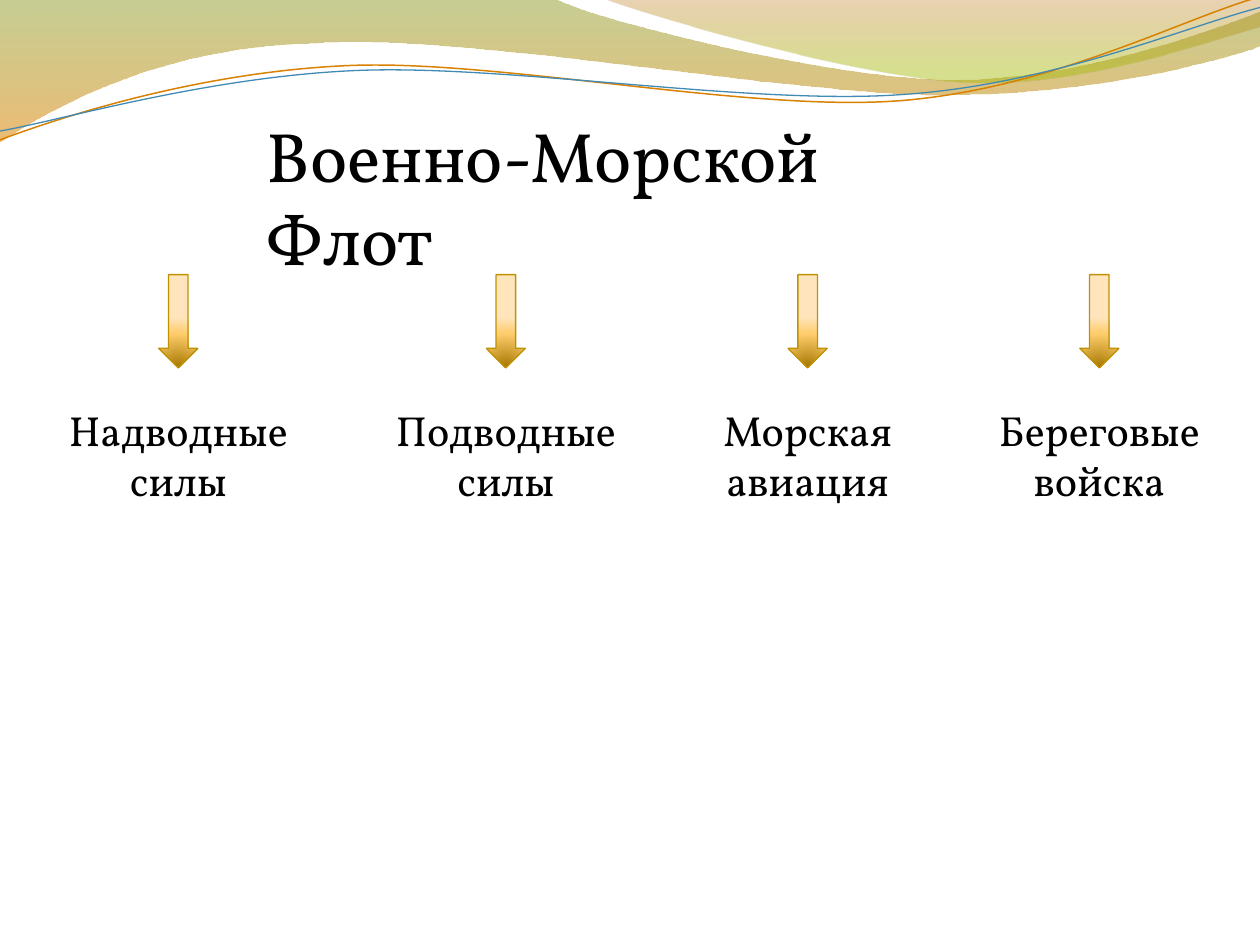
from math import cos, radians, sin

from lxml.etree import SubElement
from pptx import Presentation
from pptx.dml.color import RGBColor
from pptx.enum.shapes import MSO_SHAPE
from pptx.enum.text import MSO_AUTO_SIZE, PP_ALIGN
from pptx.oxml import parse_xml
from pptx.oxml.ns import nsdecls, qn
from pptx.util import Inches, Pt

TITLE = "Военно-Морской Флот"
BRANCHES = [
    ("Надводные силы", 1.97),
    ("Подводные силы", 1.97),
    ("Морская авиация", 1.56),
    ("Береговые войска", 1.81),
]
LABEL_LEFT, LABEL_TOP, LABEL_HEIGHT, LABEL_GAP = 0.43, 3.16, 0.91, 0.63
ARROW_TOP, ARROW_WIDTH, ARROW_HEIGHT = 2.18, 0.31, 0.74
WAVE_TILT = 2.7

LINEAR = '<a:lin ang="5400000" scaled="1"/>'
RADIAL = ('<a:path path="circle"><a:fillToRect l="50000" t="130000" '
          'r="50000" b="-30000"/></a:path>')
ARROW_STOPS = [(0, "A57700", 100), (68, "FFCD6C", 100), (100, "FFE4BC", 100)]

BANDS = [
    {
        "start": (0, 0),
        "segments": [
            [(4.4, -0.01)],
            [(4.76, 0.17), (6.64, 0.63), (7.58, 0.63)],
            [(8.53, 0.63), (9.58, 0.26), (10, 0.09)],
            [(10.01, 0.36)],
            [(9.83, 0.44), (8.7, 0.76), (7.46, 0.75)],
            [(6.22, 0.75), (3.82, 0.28), (2.57, 0.34)],
            [(1.29, 0.36), (0.46, 0.83), (-0.01, 1.13)],
            [(0, 0)],
        ],
        "stops": [(0, "839212", 45), (100, "DF8500", 55)],
    },
    {
        "start": (4.79, -0.01),
        "segments": [
            [(5.09, 0.11), (6.82, 0.62), (7.69, 0.65)],
            [(8.56, 0.69), (9.61, 0.32), (10, 0.21)],
            [(10, 0)],
            [(4.79, -0.01)],
        ],
        "stops": [(0, "B66C00", 30), (80, "A6BB09", 45)],
    },
]
WAVES = [
    {
        "start": (0, 1.11),
        "segments": [
            [(0.48, 0.93), (1.58, 0.57), (2.77, 0.52)],
            [(3.95, 0.47), (5.93, 0.89), (7.13, 0.8)],
            [(8.33, 0.71), (9.38, 0.15), (9.98, -0.02)],
        ],
        "center": (4.99, 0.58),
        "line": ("D98100", 0.85),
    },
    {
        "start": (0, 1.04),
        "segments": [
            [(0.47, 0.96), (1.64, 0.61), (2.83, 0.56)],
            [(4.03, 0.51), (5.97, 0.84), (7.17, 0.75)],
            [(8.36, 0.67), (9.41, 0.21), (10, 0.06)],
        ],
        "center": (5, 0.59),
        "line": ("418AB3", 0.75),
    },
]


def color(value):
    """Turn a hex string into a colour."""
    return RGBColor.from_string(value)


def turn(point, center):
    """Turn a point clockwise by the wave tilt."""
    angle = radians(WAVE_TILT)
    across, down = point[0] - center[0], point[1] - center[1]
    return (center[0] + across * cos(angle) - down * sin(angle),
            center[1] + across * sin(angle) + down * cos(angle))


def set_gradient(shape, stops, direction):
    """Fill a shape with gradient stops of position, colour and opacity."""
    marks = "".join(
        f'<a:gs pos="{position * 1000}"><a:srgbClr val="{value}">'
        f'<a:alpha val="{opacity * 1000}"/></a:srgbClr></a:gs>'
        for position, value, opacity in stops
    )
    shape._element.spPr.insert(2, parse_xml(
        f'<a:gradFill {nsdecls("a")} rotWithShape="1">'
        f'<a:gsLst>{marks}</a:gsLst>{direction}</a:gradFill>'
    ))


def set_line(shape, value, width):
    """Draw a solid outline."""
    shape.line.color.rgb = color(value)
    shape.line.width = Pt(width)


def bend(shape, segments):
    """Join each run of three control points into one cubic curve."""
    outline = next(shape._element.iter(qn("a:path")))
    steps = iter(outline.findall(qn("a:lnTo")))
    for segment in segments:
        pieces = [next(steps) for _ in segment]
        if len(pieces) == 3:
            curve = SubElement(outline, qn("a:cubicBezTo"))
            pieces[0].addprevious(curve)
            for piece in pieces:
                curve.append(piece[0])
                outline.remove(piece)


def add_curve(page, start, segments, stops=None, line=None, center=None):
    """Add a filled band or a tilted open wave."""
    points = [start] + [point for segment in segments for point in segment]
    if center:
        points = [turn(point, center) for point in points]
    points = [(Inches(x), Inches(y)) for x, y in points]
    builder = page.shapes.build_freeform(*points[0])
    builder.add_line_segments(points[1:], close=stops is not None)
    shape = builder.convert_to_shape()
    bend(shape, segments)
    shape.shadow.inherit = False
    if stops:
        shape.line.fill.background()
        set_gradient(shape, stops, LINEAR)
    else:
        shape.rotation = 360 - WAVE_TILT
        shape.fill.background()
        set_line(shape, *line)


def add_text(page, text, left, top, width, height, size, alignment):
    """Add a wrapped text box."""
    box = page.shapes.add_textbox(Inches(left), Inches(top), Inches(width), Inches(height))
    box.text_frame.word_wrap = True
    box.text_frame.auto_size = MSO_AUTO_SIZE.SHAPE_TO_FIT_TEXT
    para = box.text_frame.paragraphs[0]
    para.alignment = alignment
    span = para.add_run()
    span.text = text
    for name, value in {"name": "Vollkorn", "size": Pt(size)}.items():
        setattr(span.font, name, value)
    span.font.color.rgb = color("000000")


def add_arrow(page, center):
    """Add a shaded down arrow around a centre line."""
    arrow = page.shapes.add_shape(
        MSO_SHAPE.DOWN_ARROW, Inches(center - ARROW_WIDTH / 2), Inches(ARROW_TOP),
        Inches(ARROW_WIDTH), Inches(ARROW_HEIGHT),
    )
    arrow.shadow.inherit = False
    set_line(arrow, "BF9202", 0.75)
    set_gradient(arrow, ARROW_STOPS, RADIAL)


def main():
    """Build and save the slide."""
    deck = Presentation()
    deck.slide_width, deck.slide_height = Inches(10), Inches(7.5)
    page = deck.slides.add_slide(deck.slide_layouts[6])
    for curve in BANDS + WAVES:
        add_curve(page, **curve)
    add_text(page, TITLE, 2.02, 0.84, 5.96, 0.77, 40, PP_ALIGN.LEFT)
    left = LABEL_LEFT
    for label, width in BRANCHES:
        add_text(page, label, left, LABEL_TOP, width, LABEL_HEIGHT, 24, PP_ALIGN.CENTER)
        add_arrow(page, left + width / 2)
        left += width + LABEL_GAP
    deck.save("out.pptx")


if __name__ == "__main__":
    main()
